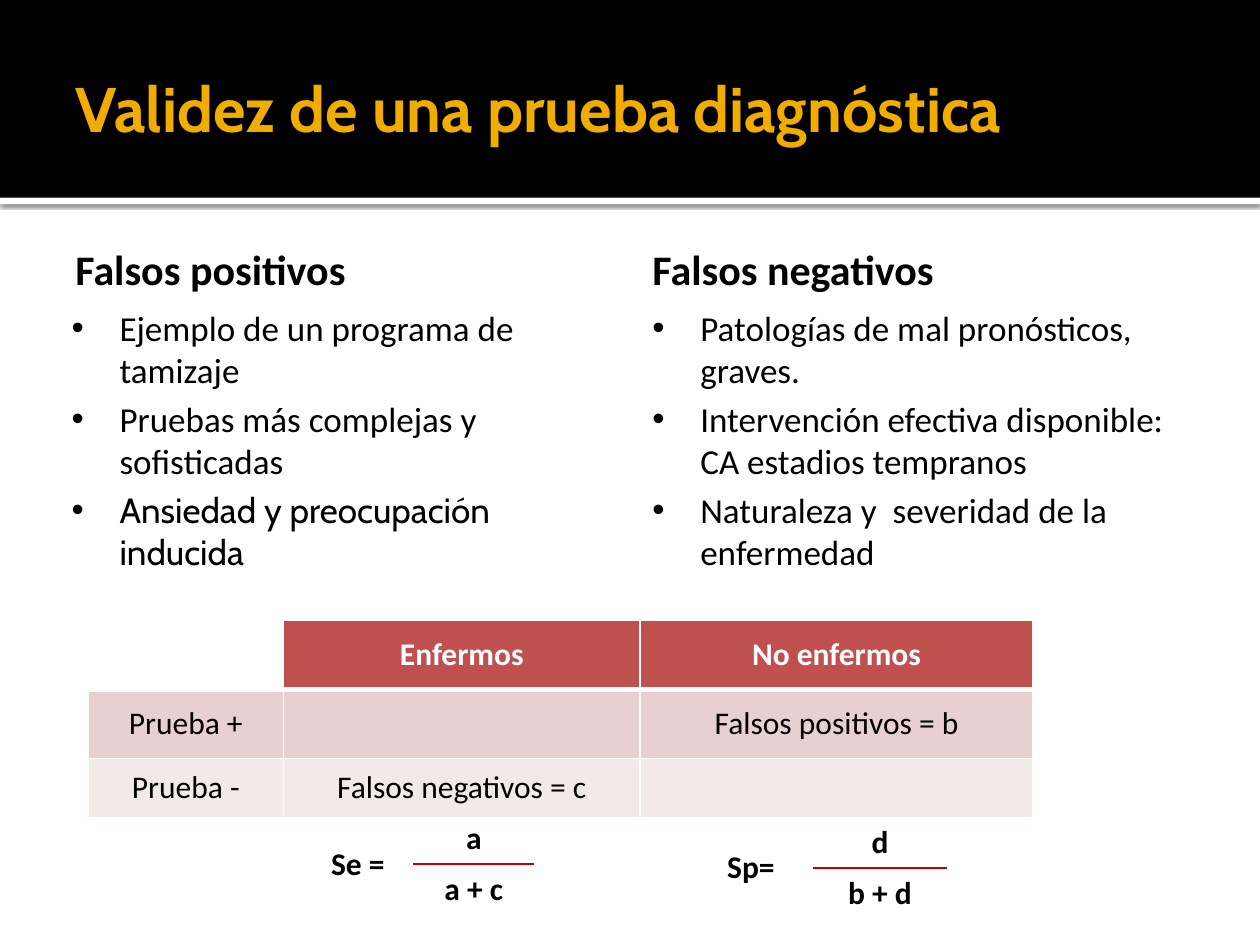
import pptx
import pptx.dml.color
import pptx.enum.shapes
import pptx.enum.text
import pptx.oxml.ns
import pptx.util
from lxml import etree

PX = 9144
ANCHOR = pptx.enum.text.MSO_ANCHOR
CENTER = pptx.enum.text.PP_ALIGN.CENTER
qn = pptx.oxml.ns.qn


def px(length):
    return pptx.util.Emu(length * PX)


def hex_color(value):
    return pptx.dml.color.RGBColor.from_string(value)


def add_span(para, text, size, color="000000", bold=False, font="Calibri"):
    span = para.add_run()
    span.text = text
    span.font.name = font
    span.font.size = pptx.util.Pt(size)
    span.font.bold = bold
    span.font.color.rgb = hex_color(color)


def add_text_box(page, left, top, width, height, anchor):
    box = page.shapes.add_textbox(px(left), px(top), px(width), px(height))
    box.text_frame.word_wrap = True
    box.text_frame.vertical_anchor = anchor
    return box.text_frame


def add_band(page, top, height, color):
    band = page.shapes.add_shape(
        pptx.enum.shapes.MSO_SHAPE.RECTANGLE, 0, px(top), px(1000), px(height))
    band.shadow.inherit = False
    band.fill.solid()
    band.fill.fore_color.rgb = hex_color(color)
    band.line.fill.background()
    return band


def add_header(page, height, title):
    strip = add_band(page, height, 5, "FFFFFF")
    effects = strip._element.spPr.find(qn("a:effectLst"))
    shadow = etree.SubElement(effects, qn("a:outerShdw"), blurRad="31750",
                              dist="10160", dir="5400000", rotWithShape="0")
    shade = etree.SubElement(shadow, qn("a:srgbClr"), val="000000")
    etree.SubElement(shade, qn("a:alpha"), val="60000")
    add_band(page, 0, height, "000000")
    frame = add_text_box(page, 50, 17, 900, height - 20, ANCHOR.MIDDLE)
    frame.margin_right = px(5)
    add_span(frame.paragraphs[0], title, 36, "F0AD00", True, "Cabin")


def add_column(page, left, top, list_left, heading, items):
    frame = add_text_box(page, left, top, 442, 70, ANCHOR.BOTTOM)
    add_span(frame.paragraphs[0], heading, 24, bold=True)
    frame = add_text_box(page, list_left, top + 70, 442, 432, ANCHOR.TOP)
    for index, (text, font) in enumerate(items):
        para = frame.add_paragraph() if index else frame.paragraphs[0]
        properties = para._p.get_or_add_pPr()
        properties.set("marL", str(px(38)))
        properties.set("indent", str(px(-38)))
        etree.SubElement(properties, qn("a:buFont"), typeface="Arial")
        etree.SubElement(properties, qn("a:buChar"), char="•")
        if index:
            para.space_before = pptx.util.Pt(4)
        add_span(para, text, 20, font=font)


def set_borders(cell, borders):
    properties = cell._tc.get_or_add_tcPr()
    for index, side in enumerate("LRTB"):
        line = etree.Element(qn("a:ln" + side))
        if side in borders:
            color, width = borders[side]
            line.set("w", str(pptx.util.Pt(width)))
            fill = etree.SubElement(line, qn("a:solidFill"))
            etree.SubElement(fill, qn("a:srgbClr"), val=color)
        else:
            etree.SubElement(line, qn("a:noFill"))
        properties.insert(index, line)


def add_grid(page, left, top, widths, heights):
    grid = page.shapes.add_table(
        len(heights), len(widths), px(left), px(top),
        px(sum(widths)), px(sum(heights))).table
    for column, width in zip(grid.columns, widths):
        column.width = px(width)
    for row, height in zip(grid.rows, heights):
        row.height = px(height)
    return grid


def write_cell(cell, text, color="000000", bold=False):
    cell.vertical_anchor = ANCHOR.MIDDLE
    para = cell.text_frame.paragraphs[0]
    para.alignment = CENTER
    if text:
        add_span(para, text, 18, color, bold)


def add_results_table(page, left, top):
    rows = [
        ("", "Enfermos", "No enfermos"),
        ("Prueba +", "", "Falsos positivos = b"),
        ("Prueba -", "Falsos negativos = c", ""),
    ]
    fills = ["C0504D", "E8D0D0", "F4E9E9"]
    grid = add_grid(page, left, top, [155, 283, 312], [55, 55, 47])
    for r, texts in enumerate(rows):
        borders = {side: ("FFFFFF", 1) for side in "LRTB"}
        if r < 2:
            borders["TB"[1 - r]] = ("FFFFFF", 3)
        for c, text in enumerate(texts):
            cell = grid.cell(r, c)
            cell.fill.solid()
            corner = r == c == 0
            cell.fill.fore_color.rgb = hex_color("FFFFFF" if corner else fills[r])
            write_cell(cell, text, "000000" if r else "FFFFFF", r == 0)
            set_borders(cell, borders)


def add_formula(page, left, top, widths, name, numerator, denominator):
    grid = add_grid(page, left, top, widths, [41, 41])
    rule = ("C00000", 1.5)
    parts = [
        (0, 0, name, {}),
        (1, 0, "", {}),
        (0, 1, numerator, {"B": rule}),
        (1, 1, denominator, {"T": rule}),
    ]
    for r, c, text, borders in parts:
        cell = grid.cell(r, c)
        cell.fill.background()
        write_cell(cell, text, bold=True)
        set_borders(cell, borders)
    grid.cell(0, 0).merge(grid.cell(1, 0))


def main():
    deck = pptx.Presentation()
    deck.slide_width, deck.slide_height = px(1000), px(750)
    page = deck.slides.add_slide(deck.slide_layouts[6])
    add_header(page, 157, "Validez de una prueba diagnóstica")
    add_column(page, 50, 168, 47, "Falsos positivos", [
        ("Ejemplo de un programa de tamizaje", "Calibri"),
        ("Pruebas más complejas y sofisticadas", "Calibri"),
        ("Ansiedad y preocupación inducida", "Cabin"),
    ])
    add_column(page, 508, 168, 508, "Falsos negativos", [
        ("Patologías de mal pronósticos, graves.", "Calibri"),
        ("Intervención efectiva disponible: CA estadios tempranos", "Calibri"),
        ("Naturaleza y  severidad de la enfermedad", "Calibri"),
    ])
    add_results_table(page, 70, 492)
    add_formula(page, 240, 645, [88, 96], "Se =", "a", "a + c")
    add_formula(page, 547, 648, [98, 107], "Sp=", "d", "b + d")
    deck.save("out.pptx")


if __name__ == "__main__":
    main()
